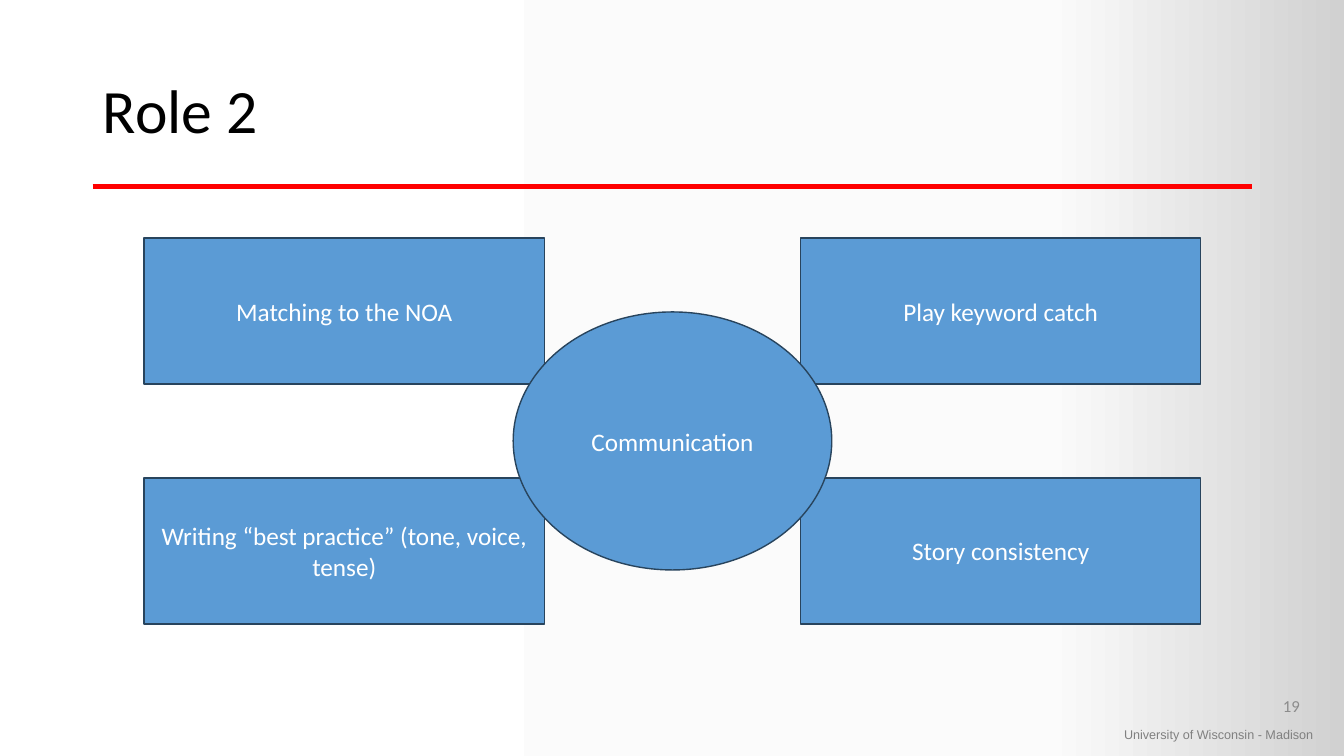
from copy import deepcopy

from pptx import Presentation
from pptx.dml.color import RGBColor
from pptx.enum.shapes import MSO_CONNECTOR, MSO_SHAPE
from pptx.enum.text import MSO_ANCHOR as Anchor, PP_ALIGN as Align
from pptx.oxml.ns import qn
from pptx.util import Inches, Pt

TITLE = "Role 2"
PRACTICES = [
    ["Matching to the NOA", "Play keyword catch"],
    ["Writing “best practice” (tone, voice, tense)", "Story consistency"],
]
HUB = "Communication"
SLIDE_NUMBER = "19"
FOOTER = "University of Wisconsin - Madison"

COLORS = {
    "title": "000000", "rule": "FF0000", "box": "5B9BD5", "outline": "28445D",
    "box_text": "FFFFFF", "number": "8C8C8C", "footer": "808080",
}
BACKGROUND_STOPS = [(0, "FFFFFF"), (0.78, "FBFBFB"), (1, "D1D1D1")]

SLIDE_WIDTH, SLIDE_HEIGHT = 13.33, 7.5
MARGIN, RULE_TOP = 0.92, 1.85
BOX_LEFT, BOX_TOP, BOX_WIDTH, BOX_HEIGHT = 1.43, 2.36, 3.97, 1.45
COLUMN_STEP, ROW_STEP = 6.51, 2.38
HUB_WIDTH, HUB_HEIGHT = 3.16, 2.56


def color(name):
    return RGBColor.from_string(COLORS[name])


def place(left, top, width, height):
    return [Inches(value) for value in (left, top, width, height)]


def write(shape, text, *, size, fill, font="Calibri", align=Align.LEFT,
          anchor=Anchor.MIDDLE, line_spacing=None):
    frame = shape.text_frame
    frame.word_wrap = True
    frame.vertical_anchor = anchor
    paragraph = frame.paragraphs[0]
    paragraph.text = text
    paragraph.alignment = align
    paragraph.line_spacing = line_spacing
    paragraph.font.name = font
    paragraph.font.size = Pt(size)
    paragraph.font.color.rgb = color(fill)


def paint_background(slide):
    fill = slide.background.fill
    fill.gradient()
    fill.gradient_angle = 0
    stop_list = next(slide.element.iter(qn("a:gsLst")))
    stop_list.append(deepcopy(stop_list[-1]))
    for stop, (position, value) in zip(fill.gradient_stops, BACKGROUND_STOPS):
        stop.position = position
        stop.color.rgb = RGBColor.from_string(value)


def add_rule(slide):
    y = Inches(RULE_TOP)
    rule = slide.shapes.add_connector(
        MSO_CONNECTOR.STRAIGHT, Inches(MARGIN), y, Inches(MARGIN + 11.5), y)
    rule.line.color.rgb = color("rule")
    rule.line.width = Pt(3)
    properties = rule._element.spPr
    properties.append(properties.makeelement(qn("a:effectLst"), {}))


def add_topic(slide, kind, text, *bounds):
    shape = slide.shapes.add_shape(kind, *place(*bounds))
    shape.shadow.inherit = False
    shape.fill.solid()
    shape.fill.fore_color.rgb = color("box")
    shape.line.color.rgb = color("outline")
    shape.line.width = Pt(1)
    write(shape, text, size=18, fill="box_text", align=Align.CENTER)


def main():
    presentation = Presentation()
    presentation.slide_width = Inches(SLIDE_WIDTH)
    presentation.slide_height = Inches(SLIDE_HEIGHT)
    slide = presentation.slides.add_slide(presentation.slide_layouts.get_by_name("Title Only"))
    paint_background(slide)

    title = slide.shapes.title
    title.left, title.top, title.width, title.height = place(MARGIN, 0.4, 11.5, 1.45)
    write(title, TITLE, size=44, fill="title", line_spacing=0.9)
    add_rule(slide)

    for row, texts in enumerate(PRACTICES):
        for column, text in enumerate(texts):
            add_topic(slide, MSO_SHAPE.RECTANGLE, text,
                      BOX_LEFT + column * COLUMN_STEP, BOX_TOP + row * ROW_STEP,
                      BOX_WIDTH, BOX_HEIGHT)

    center_x = BOX_LEFT + (COLUMN_STEP + BOX_WIDTH) / 2
    center_y = BOX_TOP + (ROW_STEP + BOX_HEIGHT) / 2
    add_topic(slide, MSO_SHAPE.OVAL, HUB, center_x - HUB_WIDTH / 2,
              center_y - HUB_HEIGHT / 2 + 0.1, HUB_WIDTH, HUB_HEIGHT)

    number = slide.shapes.add_textbox(*place(9.99, 6.8, 3, 0.4))
    write(number, SLIDE_NUMBER, size=12, fill="number", align=Align.RIGHT)
    footer = slide.shapes.add_textbox(*place(11.05, 7.16, 2.2, 0.25))
    write(footer, FOOTER, size=9, fill="footer", font="Arial", anchor=Anchor.TOP)

    presentation.save("out.pptx")


if __name__ == "__main__":
    main()
